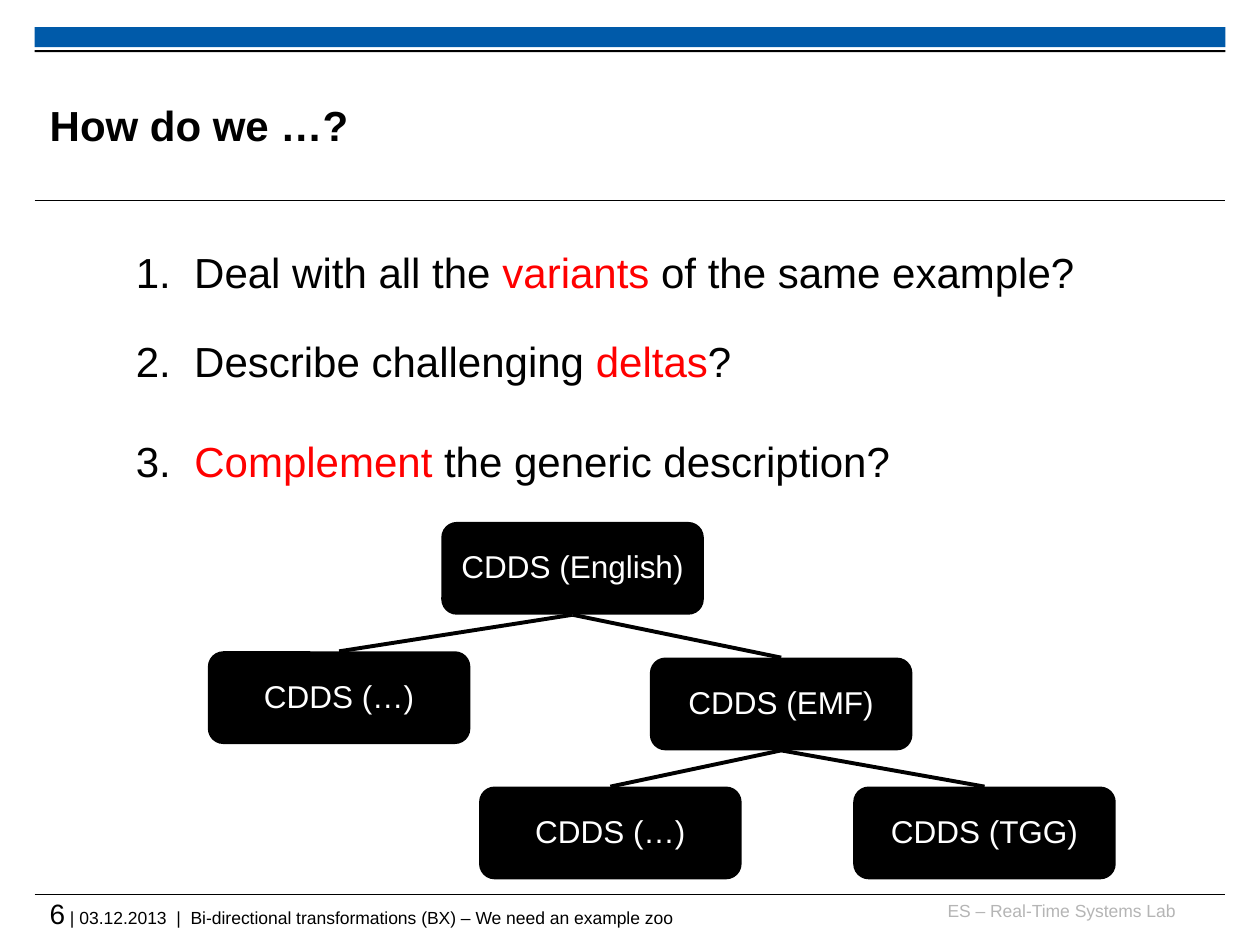
from lxml import etree
from pptx import Presentation
from pptx.dml.color import RGBColor
from pptx.enum.shapes import MSO_CONNECTOR, MSO_SHAPE
from pptx.enum.text import MSO_ANCHOR, PP_ALIGN
from pptx.oxml.ns import qn
from pptx.util import Pt

STRAIGHT = MSO_CONNECTOR.STRAIGHT
RECT, ROUNDED = MSO_SHAPE.RECTANGLE, MSO_SHAPE.ROUNDED_RECTANGLE
TOP, MIDDLE = MSO_ANCHOR.TOP, MSO_ANCHOR.MIDDLE
LEFT, CENTER, RIGHT = PP_ALIGN.LEFT, PP_ALIGN.CENTER, PP_ALIGN.RIGHT
BLACK, WHITE, RED, BLUE, GREY = "000000", "FFFFFF", "FF0000", "005AA9", "B5B5B5"
BOTTOM_SITE, TOP_SITE = 2, 0


def rgb(value):
    return RGBColor.from_string(value)


def write(s, runs, align=LEFT, anchor=TOP, inset=None, wrap=True, spacing=None):
    """Fill the first paragraph of s with runs of (text, size, colour, bold)."""
    tf = s.text_frame
    tf.word_wrap = wrap
    tf.vertical_anchor = anchor
    if inset is not None:
        tf.margin_left = tf.margin_top = tf.margin_right = tf.margin_bottom = Pt(inset)
    p = tf.paragraphs[0]
    p.alignment = align
    if spacing:
        p.line_spacing = spacing
    for text, size, color, bold in runs:
        r = p.add_run()
        r.text = text
        r.font.name = "Arial"
        r.font.size = Pt(size)
        r.font.bold = bold
        r.font.color.rgb = rgb(color)


prs = Presentation()
prs.slide_width, prs.slide_height = Pt(720), Pt(540)
slide = prs.slides.add_slide(prs.slide_layouts[6])
shapes = slide.shapes

# Header bars
for top, height, color in [(15.5, 11.5, BLUE), (28.6, 1.2, BLACK)]:
    s = shapes.add_shape(RECT, Pt(19.8), Pt(top), Pt(680.4), Pt(height))
    s.shadow.inherit = False
    s.fill.solid()
    s.fill.fore_color.rgb = rgb(color)
    s.line.fill.background()

# Title and footer
frame_texts = [
    (28.4, 38.2, 541.4, 66.2, LEFT, MIDDLE, [("How do we …?", 24, BLACK, True)]),
    (529.9, 514.1, 141.8, 18, RIGHT, TOP,
     [("ES – Real-Time Systems Lab", 10, GREY, False)]),
    (28.4, 512.6, 671.8, 23.8, LEFT, TOP,
     [("6", 16, BLACK, False),
      (" | 03.12.2013  |  Bi-directional transformations (BX) – We need an example zoo",
       10, BLACK, False)]),
]
for left, top, width, height, align, anchor, runs in frame_texts:
    sp = shapes.add_textbox(Pt(left), Pt(top), Pt(width), Pt(height))
    write(sp, runs, align, anchor, inset=0)

# Questions
questions = [
    (139.7, [("1.  Deal with all the ", BLACK), ("variants ", RED),
             ("of the same example?", BLACK)]),
    (190.8, [("2.  Describe challenging ", BLACK), ("deltas", RED), ("?", BLACK)]),
    (247.7, [("3.  ", BLACK), ("Complement ", RED),
             ("the generic description?", BLACK)]),
]
for top, parts in questions:
    sp = shapes.add_textbox(Pt(70.6), Pt(top), Pt(556.6), Pt(34.6))
    write(sp, [(text, 24, color, False) for text, color in parts], spacing=0.93)

# Tree of descriptions
nodes = {}
for key, text, left, top in [
    ("english", "CDDS (English)", 252.2, 298.3),
    ("emf", "CDDS (EMF)", 371.4, 375.8),
    ("tgg", "CDDS (TGG)", 487.6, 449.5),
    ("emf other", "CDDS (…)", 273.8, 449.5),
    ("english other", "CDDS (…)", 118.8, 372.2),
]:
    s = shapes.add_shape(ROUNDED, Pt(left), Pt(top), Pt(150), Pt(53))
    s.shadow.inherit = False
    s.fill.solid()
    s.fill.fore_color.rgb = rgb(BLACK)
    s.line.fill.background()
    write(s, [(text, 18, WHITE, False)], CENTER, MIDDLE, wrap=False, spacing=0.93)
    nodes[key] = s

# Rules across the slide, then branches of the tree
lines = []
for y in (114.5, 511.2):
    rule = shapes.add_connector(STRAIGHT, Pt(19.8), Pt(y), Pt(700.2), Pt(y))
    lines.append((rule, 0.6))
for parent, child in [("english", "english other"), ("english", "emf"),
                      ("emf", "emf other"), ("emf", "tgg")]:
    branch = shapes.add_connector(STRAIGHT, 0, 0, 0, 0)
    branch.begin_connect(nodes[parent], BOTTOM_SITE)
    branch.end_connect(nodes[child], TOP_SITE)
    lines.append((branch, 2.25))
for line, weight in lines:
    line.line.color.rgb = rgb(BLACK)
    line.line.width = Pt(weight)
    etree.SubElement(line._element.spPr, qn("a:effectLst"))

prs.save("out.pptx")
